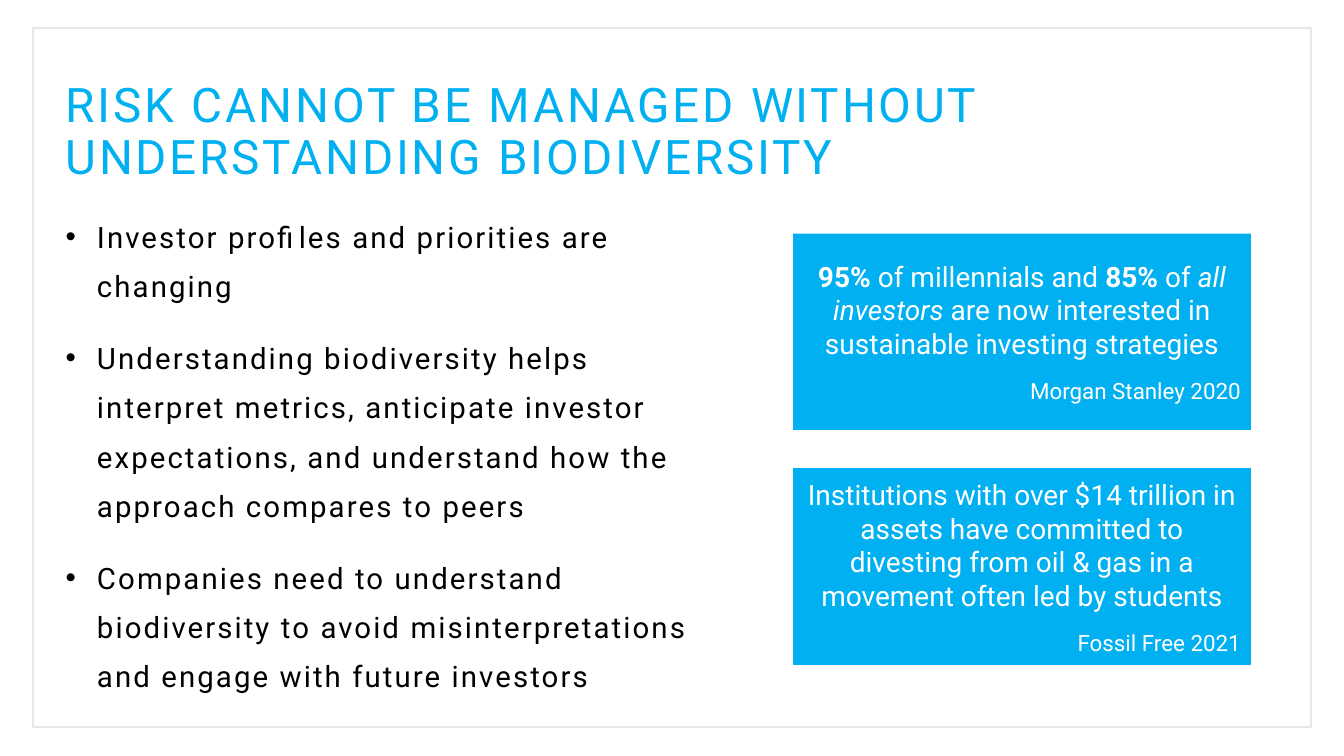
from lxml.etree import SubElement
from pptx import Presentation
from pptx.dml.color import RGBColor
from pptx.enum.shapes import MSO_SHAPE
from pptx.enum.text import MSO_ANCHOR, MSO_AUTO_SIZE, PP_ALIGN
from pptx.oxml.ns import qn
from pptx.util import Cm, Pt

TITLE = "RISK CANNOT BE MANAGED WITHOUT UNDERSTANDING BIODIVERSITY"
POINTS = [
    "Investor profiles and priorities are changing",
    "Understanding biodiversity helps interpret metrics, anticipate investor "
    "expectations, and understand how the approach compares to peers",
    "Companies need to understand biodiversity to avoid misinterpretations "
    "and engage with future investors",
]
FACTS = [
    ([("95%", "bold"), (" of millennials and ", ""), ("85%", "bold"), (" of ", ""),
      ("all investors", "italic"),
      (" are now interested in sustainable investing strategies", "")],
     "Morgan Stanley 2020"),
    ([("Institutions with over $14 trillion in assets have committed to divesting "
       "from oil & gas in a movement often led by students", "")],
     "Fossil Free 2021"),
]


def color(value):
    return RGBColor.from_string(value)


class SlideBuilder:
    font = "Roboto"
    accent = "00B0F0"
    ink = "000000"
    light = "FFFFFF"
    border = "EAE6E3"

    def __init__(self, deck):
        self.page = deck.slides.add_slide(deck.slide_layouts[1])

    def add_span(self, para, text, size, ink, emphasis="", spacing=0):
        span = para.add_run()
        span.text = text
        span.font.name = self.font
        span.font.size = Pt(size)
        span.font.color.rgb = color(ink)
        span.font.bold = emphasis == "bold"
        span.font.italic = emphasis == "italic"
        if spacing:
            span._r.get_or_add_rPr().set("spc", str(int(spacing * 100)))

    def place(self, holder, left, top, width, height):
        holder.left, holder.top = Cm(left), Cm(top)
        holder.width, holder.height = Cm(width), Cm(height)
        frame = holder.text_frame
        frame.auto_size = MSO_AUTO_SIZE.NONE
        frame.vertical_anchor = MSO_ANCHOR.TOP
        frame.word_wrap = True
        return frame

    def title(self, text, *area):
        para = self.place(self.page.shapes.title, *area).paragraphs[0]
        para.alignment = PP_ALIGN.LEFT
        para.line_spacing = 0.9
        para.space_before = Pt(0)
        self.add_span(para, text, 34, self.accent, spacing=2)

    def bullets(self, points, *area):
        frame = self.place(self.page.placeholders[1], *area)
        for index, text in enumerate(points):
            para = frame.add_paragraph() if index else frame.paragraphs[0]
            para.line_spacing = 1.4
            para.space_before = Pt(10 if index else 0)
            para.space_after = Pt(6)
            properties = para._p.get_or_add_pPr()
            properties.set("marL", str(Cm(0.79)))
            properties.set("indent", str(-Cm(0.79)))
            SubElement(properties, qn("a:buFont")).set("typeface", "Arial")
            SubElement(properties, qn("a:buChar")).set("char", "•")
            self.add_span(para, text, 21, self.ink, spacing=1.5)

    def rectangle(self, left, top, width, height, line, weight, fill=None):
        box = self.page.shapes.add_shape(
            MSO_SHAPE.RECTANGLE, Cm(left), Cm(top), Cm(width), Cm(height))
        box.shadow.inherit = False
        box.line.color.rgb = color(line)
        box.line.width = Pt(weight)
        if fill:
            box.fill.solid()
            box.fill.fore_color.rgb = color(fill)
        else:
            box.fill.background()
        return box

    def fact(self, statement, source, *area):
        frame = self.rectangle(*area, self.accent, 0.25, self.accent).text_frame
        frame.word_wrap = True
        frame.vertical_anchor = MSO_ANCHOR.MIDDLE
        para = frame.paragraphs[0]
        para.alignment = PP_ALIGN.CENTER
        for text, emphasis in statement:
            self.add_span(para, text, 20, self.light, emphasis)
        para = frame.add_paragraph()
        para.alignment = PP_ALIGN.RIGHT
        para.space_before = Pt(12)
        self.add_span(para, source, 16, self.light)


def main():
    deck = Presentation()
    deck.slide_width, deck.slide_height = Cm(33.87), Cm(19.05)
    builder = SlideBuilder(deck)
    builder.rectangle(0.84, 0.71, 32.21, 17.6, builder.border, 1.5)
    builder.title(TITLE, 1.4, 1.93, 30.99, 1.45)
    builder.bullets(POINTS, 1.4, 5.03, 16.64, 11.25)
    for index, (statement, source) in enumerate(FACTS):
        builder.fact(statement, source, 19.99, 5.89 + index * 5.92, 11.53, 4.93)
    deck.save("out.pptx")


if __name__ == "__main__":
    main()
